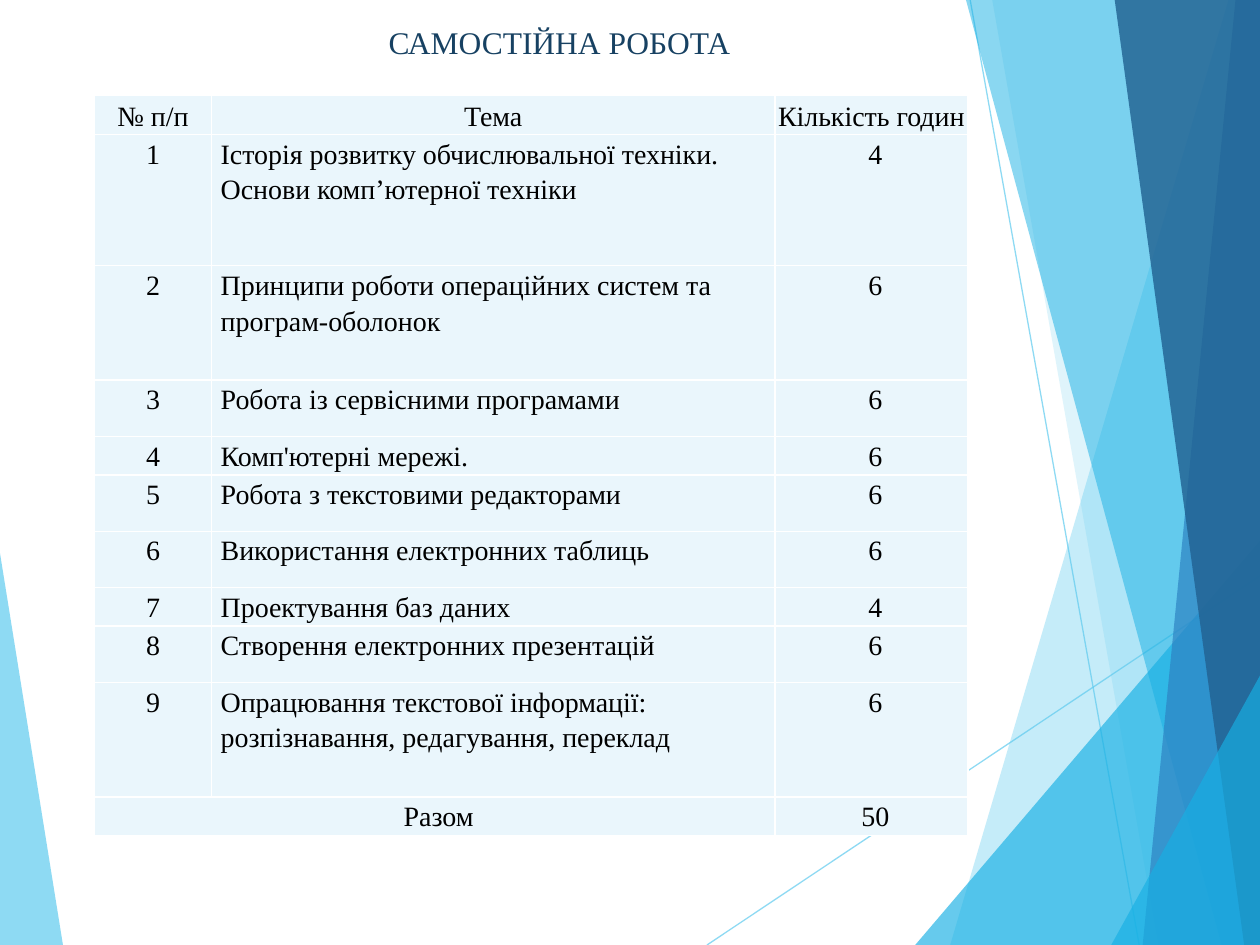
import pptx
import pptx.util
import pptx.dml.color
import pptx.enum.shapes
import pptx.enum.text
import pptx.oxml
import pptx.oxml.ns
from pptx.util import Pt

COLORS = {
    "sky": "5FCBEF",
    "cyan": "17B0E4",
    "blue": "2E83C3",
    "navy": "226292",
    "title": "174162",
    "cell": "EAF6FC",
    "text": "000000",
    "border": "FFFFFF",
}
FONT = "Times New Roman"
ALIGN = pptx.enum.text.PP_ALIGN
QN = pptx.oxml.ns.qn

LEFT_WEDGE = ("sky", 70, [(0, 316), (36, 540), (0, 540)])
RAYS = [((404, 540), (720, 329)), ((554.4, 0), (651, 540))]
BANDS = [
    ("sky", 36, [(702, 0), (543, 540), (720, 540), (720, 0)]),
    ("sky", 20, [(567, 0), (662, 540), (720, 540), (720, 0)]),
    ("cyan", 66, [(523, 540), (720, 309), (720, 540)]),
    ("cyan", 50, [(552, 0), (698, 540), (720, 540), (720, 0)]),
    ("blue", 70, [(706, 0), (653, 540), (720, 540), (720, 0)]),
    ("navy", 82, [(637, 0), (711, 540), (720, 540), (720, 0)]),
    ("cyan", 66, [(635, 540), (720, 386), (720, 540)]),
]

HEADER = ("№ п/п", "Тема", "Кількість годин")
TOPICS = [
    ("Історія розвитку обчислювальної техніки. Основи комп’ютерної техніки", 4, 75),
    ("Принципи роботи операційних систем та програм-оболонок", 6, 65.4),
    ("Робота із сервісними програмами", 6, 32.2),
    ("Комп'ютерні мережі.", 6, 21.6),
    ("Робота з текстовими редакторами", 6, 32.2),
    ("Використання електронних таблиць", 6, 32.2),
    ("Проектування баз даних", 4, 21.6),
    ("Створення електронних презентацій", 6, 32.2),
    ("Опрацювання текстової інформації: розпізнавання, редагування, переклад", 6, 65.4),
]
COLUMN_SHARES = (0.134, 0.645, 0.221)


def rgb(name):
    return pptx.dml.color.RGBColor.from_string(COLORS[name])


def paint(fill, name, opacity=100):
    fill.solid()
    fill.fore_color.rgb = rgb(name)
    return opacity


def set_opacity(properties, opacity):
    color = next(properties.iter(QN("a:srgbClr")))
    alpha = pptx.oxml.parse_xml(
        f'<a:alpha {pptx.oxml.ns.nsdecls("a")} val="{opacity * 1000}"/>'
    )
    color.append(alpha)


def style_runs(para, size, color):
    for span in para.runs:
        span.font.name = FONT
        span.font.size = Pt(size)
        span.font.bold = False
        span.font.color.rgb = rgb(color)


def add_band(page, box, name, opacity, points):
    left, top = box[:2]
    corners = [(Pt(left + x), Pt(top + y)) for x, y in points]
    builder = page.shapes.build_freeform(*corners[0])
    builder.add_line_segments(corners[1:], close=True)
    band = builder.convert_to_shape()
    band.shadow.inherit = False
    band.line.fill.background()
    paint(band.fill, name)
    set_opacity(band._element.spPr, opacity)


def add_ray(page, box, start, end):
    left, top = box[:2]
    ray = page.shapes.add_connector(
        pptx.enum.shapes.MSO_CONNECTOR.STRAIGHT,
        Pt(left + start[0]), Pt(top + start[1]),
        Pt(left + end[0]), Pt(top + end[1]),
    )
    ray.line.width = Pt(0.75)
    ray.line.color.rgb = rgb("sky")
    properties = ray._element.spPr
    set_opacity(properties, 70)
    properties.append(
        pptx.oxml.parse_xml(f'<a:effectLst {pptx.oxml.ns.nsdecls("a")}/>')
    )


def add_backdrop(page, box):
    add_band(page, box, *LEFT_WEDGE)
    for start, end in RAYS:
        add_ray(page, box, start, end)
    for band in BANDS:
        add_band(page, box, *band)


def add_title(page, box):
    frame = page.shapes.add_textbox(*map(Pt, box)).text_frame
    frame.word_wrap = True
    frame.auto_size = pptx.enum.text.MSO_AUTO_SIZE.SHAPE_TO_FIT_TEXT
    frame.text = "САМОСТІЙНА РОБОТА"
    para = frame.paragraphs[0]
    para.alignment = ALIGN.CENTER
    style_runs(para, 18, "title")


def add_borders(cell):
    properties = cell._tc.get_or_add_tcPr()
    for position, side in enumerate(("lnL", "lnR", "lnT", "lnB")):
        border = pptx.oxml.parse_xml(
            f'<a:{side} {pptx.oxml.ns.nsdecls("a")} w="{Pt(1)}"><a:solidFill>'
            f'<a:srgbClr val="{COLORS["border"]}"/></a:solidFill></a:{side}>'
        )
        properties.insert(position, border)


def fill_cell(cell, text, alignment, indent):
    cell.margin_left = cell.margin_right = Pt(0.72)
    cell.margin_top = cell.margin_bottom = 0
    paint(cell.fill, "cell")
    add_borders(cell)
    cell.text_frame.text = str(text)
    para = cell.text_frame.paragraphs[0]
    para.alignment = alignment
    para.line_spacing = 1.15
    para.space_after = Pt(10)
    if indent:
        settings = para._p.get_or_add_pPr()
        settings.set("marL", str(Pt(4.5)))
        settings.set("indent", "0")
    style_runs(para, 16, "text")


def add_hours_table(page, box):
    topics = [(number, name, hours)
              for number, (name, hours, _) in enumerate(TOPICS, 1)]
    total = ("Разом", "", sum(hours for _, hours, _ in TOPICS))
    rows = [HEADER, *topics, total]
    heights = [21.6, *(height for _, _, height in TOPICS), 10]
    table = page.shapes.add_table(len(rows), len(HEADER), *map(Pt, box)).table
    table.first_row = table.horz_banding = False
    for column, share in zip(table.columns, COLUMN_SHARES):
        column.width = Pt(round(box[2] * share, 1))
    for row, height in zip(table.rows, heights):
        row.height = Pt(height)
    last = len(rows) - 1
    table.cell(last, 0).merge(table.cell(last, 1))
    for i, values in enumerate(rows):
        for j, value in enumerate(values):
            is_topic = j == 1 and 0 < i < last
            indent = i == last or (i > 0 and j > 0)
            cell = table.cell(i, j)
            fill_cell(cell, value, ALIGN.LEFT if is_topic else ALIGN.CENTER, indent)
            if i == 0:
                cell.vertical_anchor = pptx.enum.text.MSO_ANCHOR.MIDDLE


def main():
    deck = pptx.Presentation()
    deck.slide_width, deck.slide_height = Pt(720), Pt(540)
    page = deck.slides.add_slide(deck.slide_layouts[6])
    add_backdrop(page, (0, 0, 720, 540))
    add_title(page, (139, 9.4, 361.4, 29))
    add_hours_table(page, (54, 54.7, 499, 422.6))
    deck.save("out.pptx")


if __name__ == "__main__":
    main()
